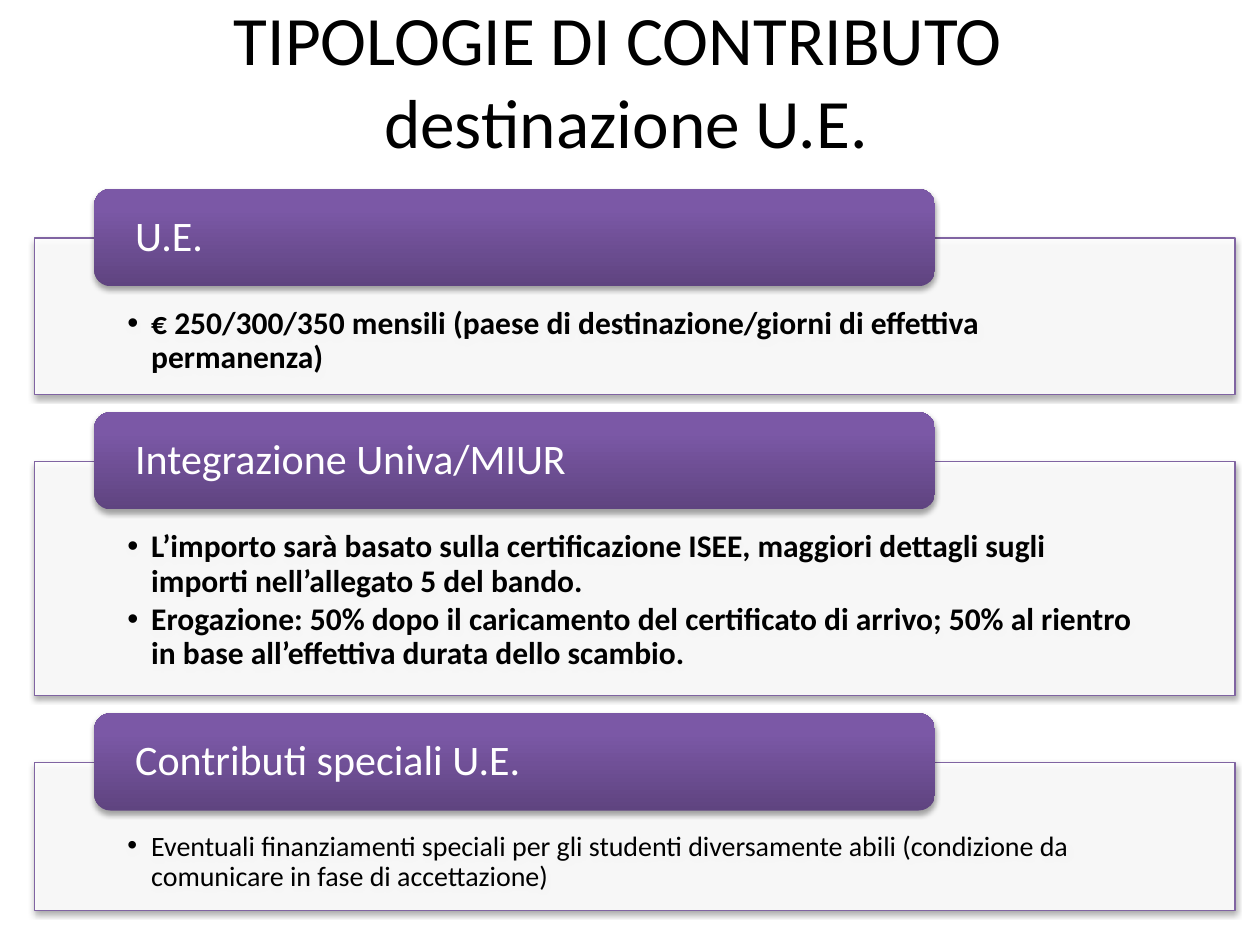
from lxml import etree
from pptx import Presentation
from pptx import util as u
from pptx.dml.color import RGBColor
from pptx.enum import shapes, text
from pptx.oxml import ns, parse_xml

FONT = "Calibri"
COLORS = {
    "title": "000000",
    "body": "000000",
    "panel": "FFFFFF",
    "border": "8064A2",
    "heading": "FFFFFF",
    "bar_bottom": "5F4480",
    "bar_middle": "7B58A6",
    "bar_top": "7C57A8",
    "shadow": "000000",
}
BAR_HEIGHT = u.Cm(1.96)
BAR_OVERLAP = u.Cm(0.97)

# Top of the panel, its height, heading, text size, bold, bullets
SECTIONS = [
    (4.8, 3.15, "U.E.", 18, True,
     ["€ 250/300/350 mensili (paese di destinazione/giorni di effettiva permanenza)"]),
    (9.3, 4.72, "Integrazione Univa/MIUR", 18, True,
     ["L’importo sarà basato sulla certificazione ISEE, maggiori dettagli sugli "
      "importi nell’allegato 5 del bando.",
      "Erogazione: 50% dopo il caricamento del certificato di arrivo; 50% al rientro "
      "in base all’effettiva durata dello scambio."]),
    (15.37, 2.99, "Contributi speciali U.E.", 16, False,
     ["Eventuali finanziamenti speciali per gli studenti diversamente abili "
      "(condizione da comunicare in fase di accettazione)"]),
]


def color(name):
    return RGBColor.from_string(COLORS[name])


def add_run(paragraph, content, size, color_name, bold=False):
    run = paragraph.add_run()
    run.text = content
    run.font.name = FONT
    run.font.size = u.Pt(size)
    run.font.bold = bold
    run.font.color.rgb = color(color_name)


def add_shadow(shape):
    shape.shadow.inherit = False
    effects = shape._element.spPr.find(ns.qn("a:effectLst"))
    effects.append(parse_xml(
        f'<a:outerShdw {ns.nsdecls("a")} blurRad="40000" dist="23000" dir="5400000" '
        f'rotWithShape="0"><a:srgbClr val="{COLORS["shadow"]}"><a:alpha val="35000"/>'
        '</a:srgbClr></a:outerShdw>'))


def set_gradient(shape):
    """Fill a bar from its dark bottom edge to its light top edge."""
    shape.fill.gradient()
    gradient = shape._element.spPr.find(ns.qn("a:gradFill"))
    stops = gradient.find(ns.qn("a:gsLst"))
    for stop in list(stops):
        stops.remove(stop)
    for position, name in ((0, "bar_bottom"), (80, "bar_middle"), (100, "bar_top")):
        stop = etree.SubElement(stops, ns.qn("a:gs"), pos=str(position * 1000))
        etree.SubElement(stop, ns.qn("a:srgbClr"), val=COLORS[name])
    gradient.find(ns.qn("a:lin")).set("ang", "16200000")


def set_bullet(paragraph):
    properties = paragraph._p.get_or_add_pPr()
    properties.set("marL", str(u.Cm(0.48)))
    properties.set("indent", str(-u.Cm(0.48)))
    etree.SubElement(properties, ns.qn("a:buFont"), typeface="Arial")
    etree.SubElement(properties, ns.qn("a:buChar"), char="•")


def set_frame(shape, side, top, bottom, anchor):
    frame = shape.text_frame
    frame.word_wrap = True
    frame.margin_left = frame.margin_right = u.Cm(side)
    frame.margin_top, frame.margin_bottom = u.Cm(top), u.Cm(bottom)
    frame.vertical_anchor = anchor
    return frame


def format_title(slide, left, top, width, height):
    title = slide.shapes.title
    title.left, title.top, title.width, title.height = left, top, width, height
    frame = title.text_frame
    frame.auto_size = text.MSO_AUTO_SIZE.NONE
    frame.vertical_anchor = text.MSO_ANCHOR.MIDDLE
    paragraph = frame.paragraphs[0]
    paragraph.alignment = text.PP_ALIGN.CENTER
    add_run(paragraph, "TIPOLOGIE DI CONTRIBUTO ", 39.6, "title")
    paragraph.add_line_break()
    add_run(paragraph, "destinazione U.E.", 39.6, "title")


def add_section(slide, left, top, width, height, heading, size, bold, bullets):
    # Panel with bulleted text
    panel = slide.shapes.add_shape(shapes.MSO_SHAPE.RECTANGLE, left, top, width, height)
    panel.fill.solid()
    panel.fill.fore_color.rgb = color("panel")
    fill_color = panel._element.spPr.find(ns.qn("a:solidFill"))[0]
    etree.SubElement(fill_color, ns.qn("a:alpha"), val="90000")
    panel.line.color.rgb = color("border")
    panel.line.width = u.Pt(0.75)
    add_shadow(panel)
    frame = set_frame(panel, 1.88, 1.4, 0.33, text.MSO_ANCHOR.TOP)
    for index, bullet in enumerate(bullets):
        paragraph = frame.add_paragraph() if index else frame.paragraphs[0]
        paragraph.alignment = text.PP_ALIGN.LEFT
        paragraph.line_spacing = 0.9
        paragraph.space_after = u.Pt(size * 0.15)
        set_bullet(paragraph)
        add_run(paragraph, bullet, size, "body", bold)

    # Heading bar across the panel's top edge
    bar = slide.shapes.add_shape(
        shapes.MSO_SHAPE.ROUNDED_RECTANGLE, left + u.Cm(1.21),
        top + BAR_OVERLAP - BAR_HEIGHT, int(width * 0.7), BAR_HEIGHT)
    set_gradient(bar)
    bar.line.fill.background()
    add_shadow(bar)
    frame = set_frame(bar, 0.73, 0, 0, text.MSO_ANCHOR.MIDDLE)
    paragraph = frame.paragraphs[0]
    paragraph.alignment = text.PP_ALIGN.LEFT
    paragraph.line_spacing = 0.9
    add_run(paragraph, heading, 24, "heading")


def main():
    presentation = Presentation()
    presentation.slide_width, presentation.slide_height = u.Cm(25.4), u.Cm(19.05)
    slide = presentation.slides.add_slide(presentation.slide_layouts[5])
    format_title(slide, u.Cm(1.19), u.Cm(0), u.Cm(22.86), u.Cm(3.18))
    for top, height, *content in SECTIONS:
        add_section(slide, u.Cm(0.69), u.Cm(top), u.Cm(24.21), u.Cm(height), *content)
    presentation.save("out.pptx")


if __name__ == "__main__":
    main()
